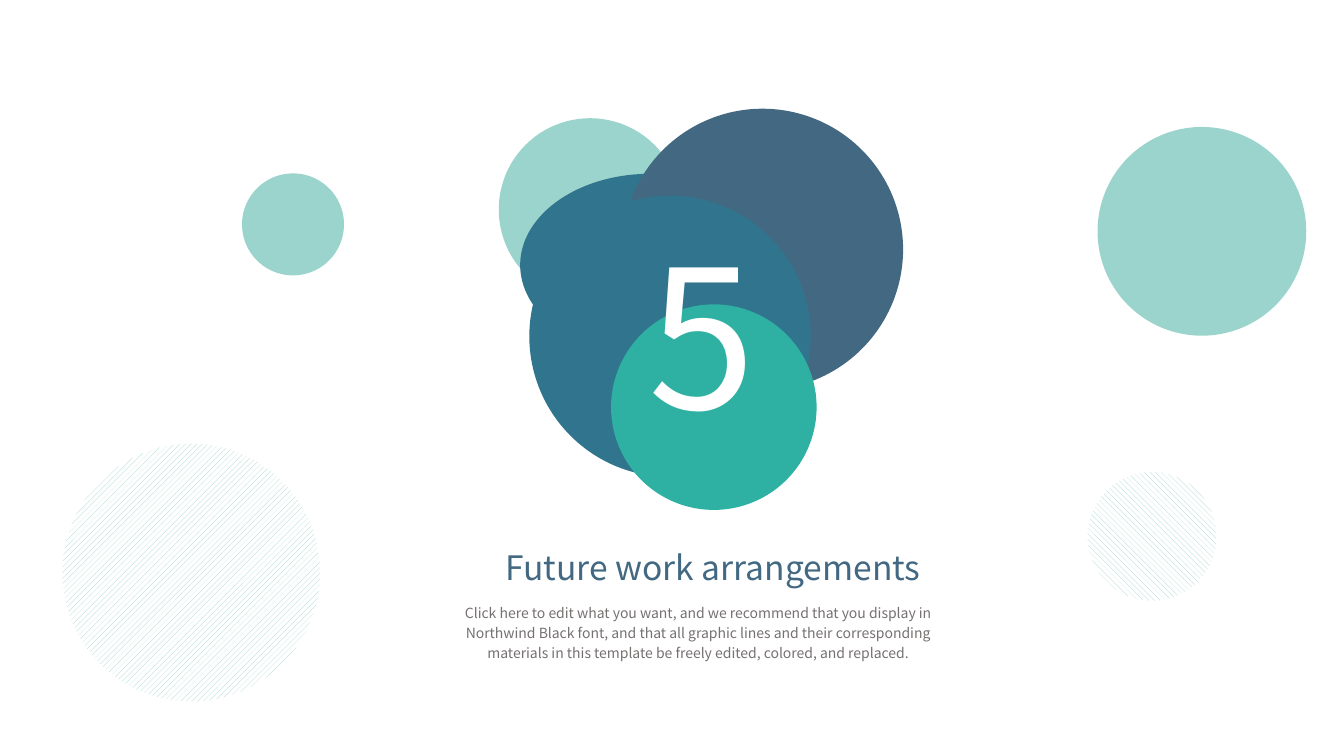
from dataclasses import dataclass

from pptx import Presentation
from pptx.dml.color import RGBColor
from pptx.dml.fill import FillFormat
from pptx.enum.dml import MSO_PATTERN
from pptx.enum.shapes import MSO_SHAPE
from pptx.enum.text import MSO_ANCHOR, MSO_AUTO_SIZE, PP_ALIGN
from pptx.shapes.autoshape import Shape
from pptx.shapes.shapetree import GroupShapes, SlideShapes
from pptx.util import Cm, Pt

FONT = "Noto Sans CJK SC"
MINT = "9BD4CC"
TEAL = "2EB0A2"
BLUE = "30748D"
SLATE = "436982"
GREY = "767171"
WHITE = "FFFFFF"


@dataclass
class Bubble:
    left: float
    top: float
    width: float
    height: float
    colour: str = MINT
    pattern: MSO_PATTERN | None = None


@dataclass
class Label:
    text: str
    left: float
    top: float
    width: float
    height: float
    size: int
    colour: str
    alignment: PP_ALIGN = PP_ALIGN.CENTER
    side_inset: float = 0
    end_inset: float = 0
    wrap: bool = False
    line_spacing: float = 1.0
    space_before: int = 0


RIGHT_BUBBLE = Bubble(27.66, 3.2, 5.26, 5.26)
CLUSTER = [
    Bubble(12.57, 2.98, 4.6, 4.6),
    Bubble(13.11, 4.38, 6.55, 4.6, BLUE),
    Bubble(15.67, 2.74, 7.09, 7.09, SLATE),
    Bubble(13.34, 4.93, 7.09, 7.09, BLUE),
    Bubble(15.4, 7.67, 5.18, 5.18, TEAL),
]
SCATTERED = [
    Bubble(6.1, 4.37, 2.57, 2.57),
    Bubble(1.57, 11.18, 6.5, 6.5, pattern=MSO_PATTERN.WIDE_UPWARD_DIAGONAL),
    Bubble(27.41, 11.89, 3.25, 3.25, pattern=MSO_PATTERN.WIDE_DOWNWARD_DIAGONAL),
]
TITLE = Label("Future work arrangements", 12.37, 13.67, 11.2, 1.22, 24, SLATE,
              side_inset=0.18, end_inset=0.1)
NUMBER = Label("5", 16.1, 5.33, 3.4, 6.15, 138, WHITE,
               alignment=PP_ALIGN.LEFT, side_inset=0.25, end_inset=0.13)
BODY = Label(
    "Click here to edit what you want, and we recommend that you display in "
    "Northwind Black font, and that all graphic lines and their corresponding "
    "materials in this template be freely edited, colored, and replaced.",
    11.15, 15.14, 12.88, 0.99, 10, GREY,
    wrap=True, line_spacing=1.2, space_before=2)


def colour_of(value: str) -> RGBColor:
    return RGBColor.from_string(value)


def paint(fill: FillFormat, bubble: Bubble) -> None:
    if bubble.pattern is None:
        fill.solid()
        fill.fore_color.rgb = colour_of(bubble.colour)
    else:
        fill.patterned()
        fill.pattern = bubble.pattern
        fill.fore_color.rgb = colour_of(bubble.colour)
        fill.back_color.rgb = colour_of(WHITE)


def draw_bubble(shapes: SlideShapes | GroupShapes, bubble: Bubble) -> None:
    shape = shapes.add_shape(MSO_SHAPE.OVAL, Cm(bubble.left), Cm(bubble.top),
                             Cm(bubble.width), Cm(bubble.height))
    shape.shadow.inherit = False
    shape.line.fill.background()
    paint(shape.fill, bubble)


def write_label(shape: Shape, label: Label) -> None:
    shape.left, shape.top = Cm(label.left), Cm(label.top)
    shape.width, shape.height = Cm(label.width), Cm(label.height)
    frame = shape.text_frame
    frame.margin_left = frame.margin_right = Cm(label.side_inset)
    frame.margin_top = frame.margin_bottom = Cm(label.end_inset)
    frame.vertical_anchor = MSO_ANCHOR.TOP
    frame.word_wrap = label.wrap
    frame.auto_size = MSO_AUTO_SIZE.SHAPE_TO_FIT_TEXT
    paragraph = frame.paragraphs[0]
    paragraph.alignment = label.alignment
    paragraph.line_spacing = label.line_spacing
    paragraph.space_before = Pt(label.space_before)
    run = paragraph.add_run()
    run.text = label.text
    run.font.name = FONT
    run.font.size = Pt(label.size)
    run.font.color.rgb = colour_of(label.colour)


def main() -> None:
    presentation = Presentation()
    presentation.slide_width = Cm(33.87)
    presentation.slide_height = Cm(19.05)
    slide = presentation.slides.add_slide(presentation.slide_layouts[5])
    shapes = slide.shapes

    draw_bubble(shapes, RIGHT_BUBBLE)
    cluster = shapes.add_group_shape()
    for bubble in CLUSTER:
        draw_bubble(cluster.shapes, bubble)
    for bubble in SCATTERED:
        draw_bubble(shapes, bubble)

    write_label(shapes.title, TITLE)
    for label in (NUMBER, BODY):
        write_label(shapes.add_textbox(0, 0, 0, 0), label)

    presentation.save("out.pptx")


if __name__ == "__main__":
    main()
